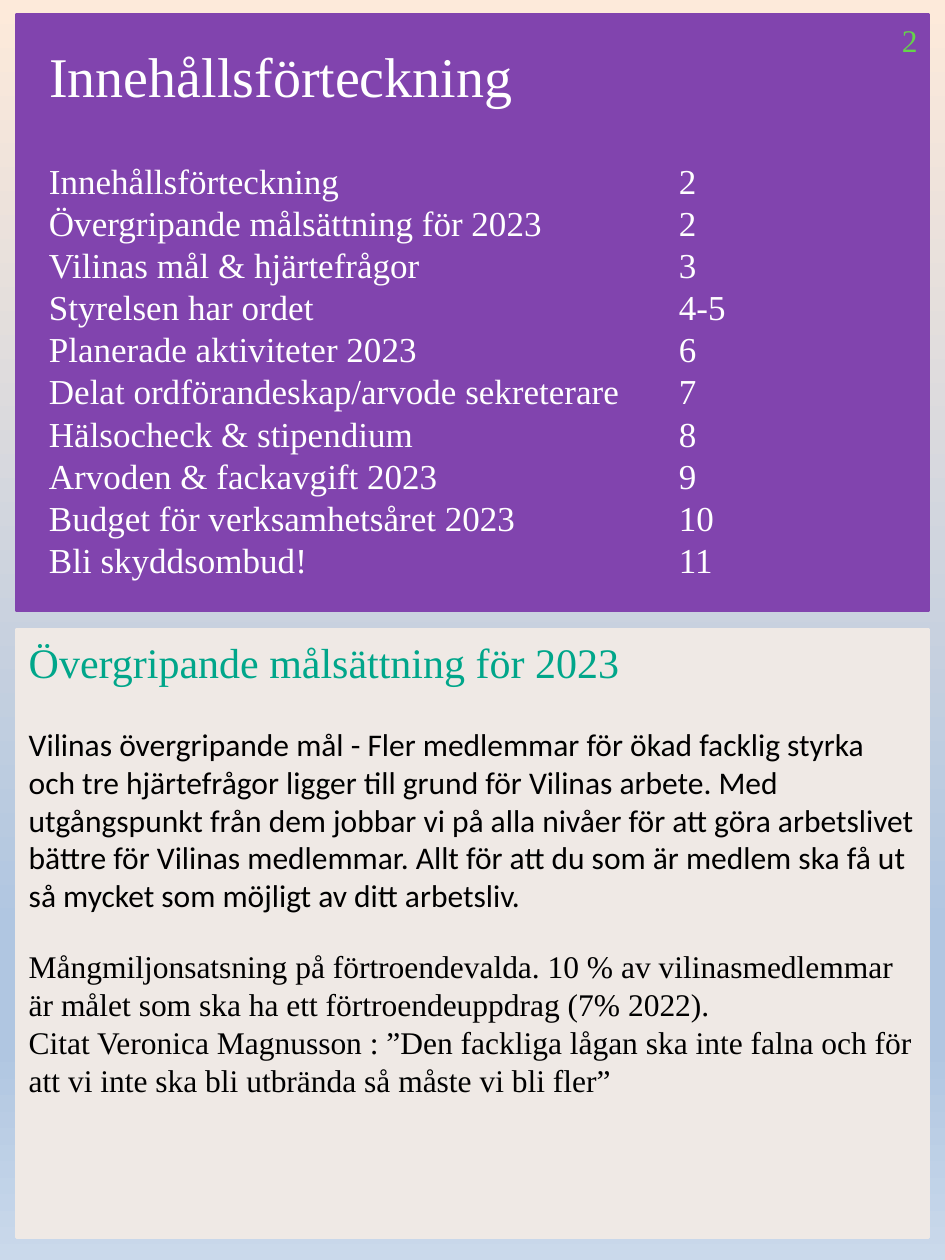
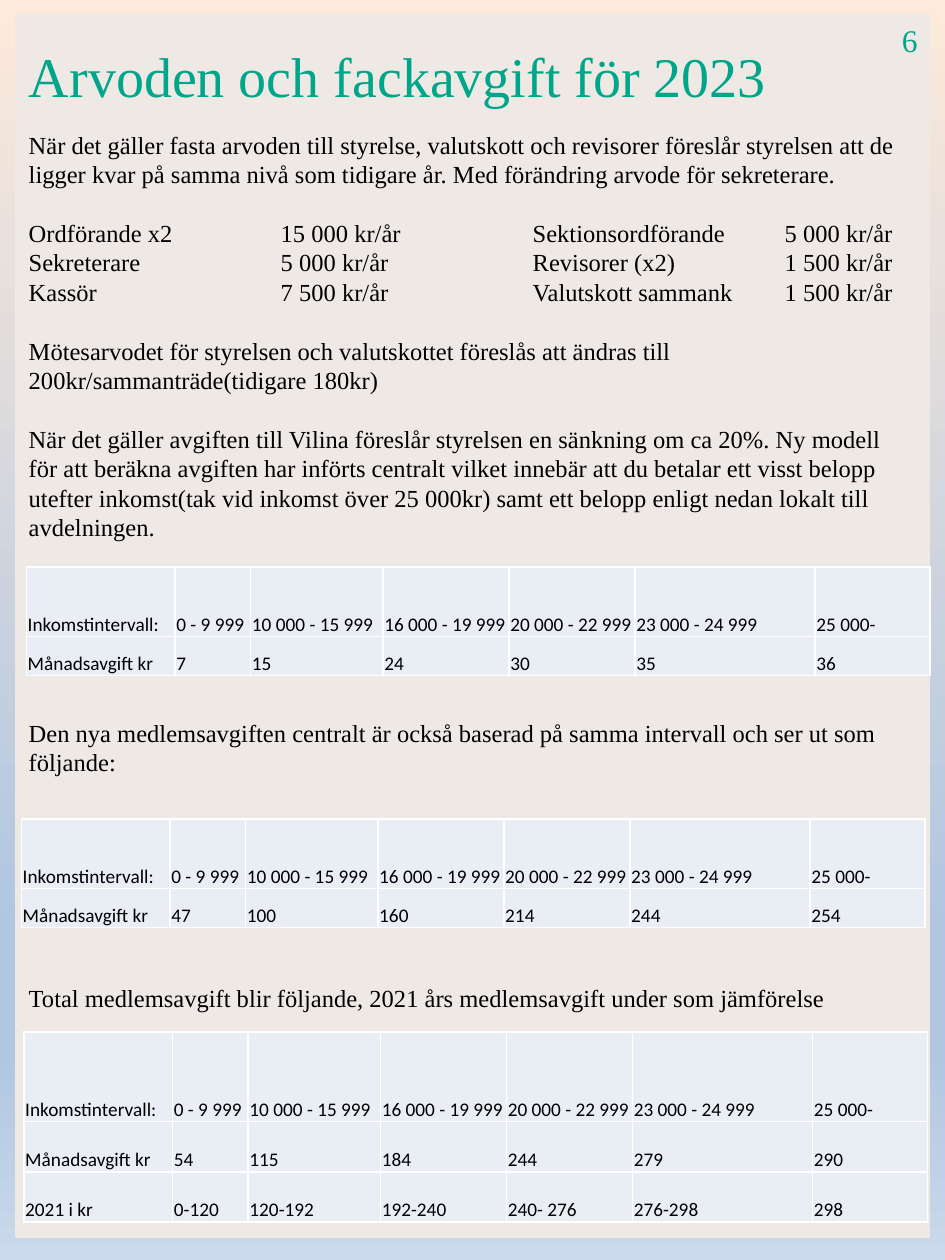
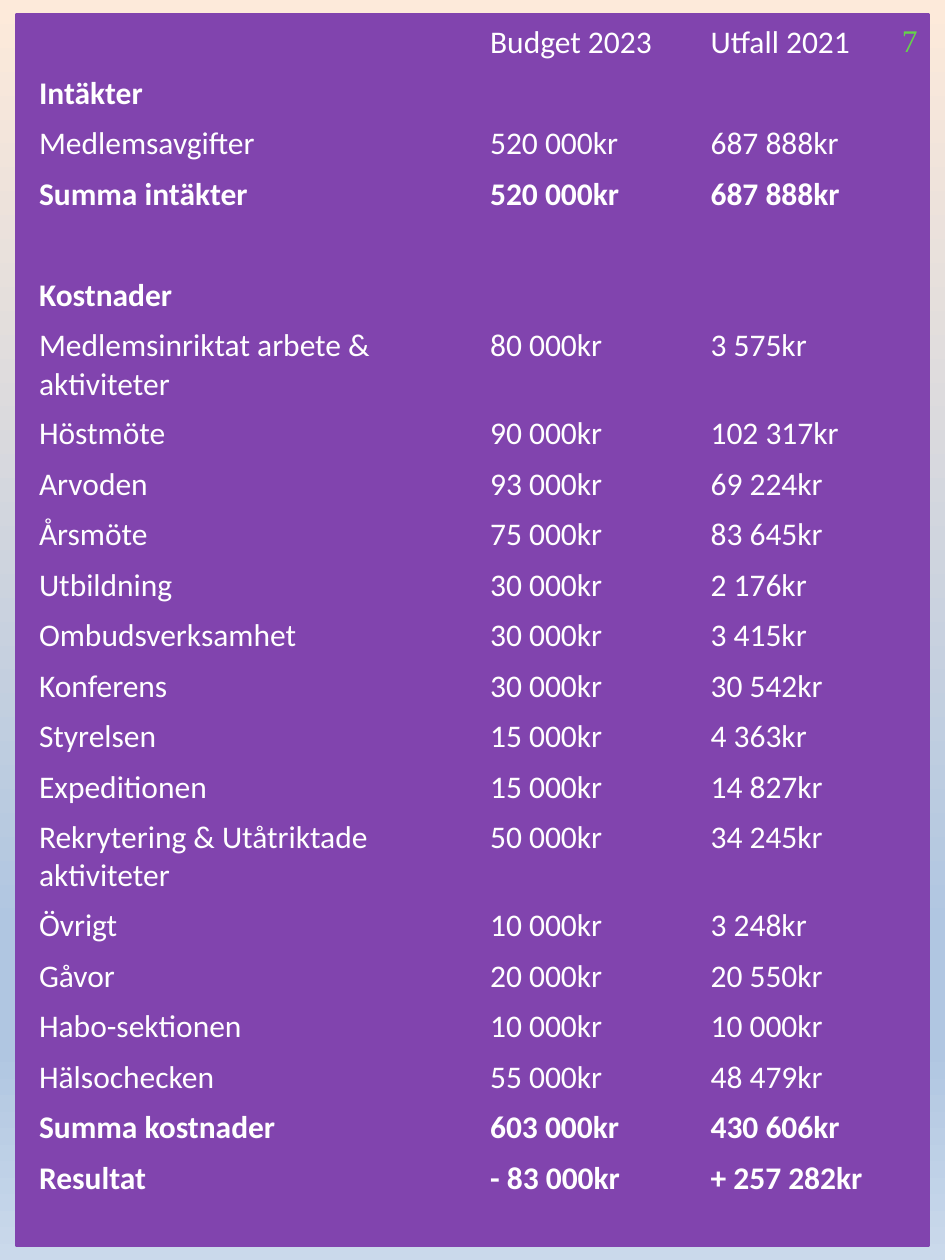
from copy import deepcopy

from lxml.etree import SubElement
from pptx import Presentation
from pptx.dml.color import RGBColor
from pptx.enum.shapes import MSO_SHAPE
from pptx.enum.text import MSO_ANCHOR, MSO_AUTO_SIZE, PP_ALIGN
from pptx.oxml.ns import qn
from pptx.util import Inches, Pt

PURPLE = RGBColor(0x81, 0x44, 0xAE)
CREAM = RGBColor(0xEF, 0xE9, 0xE5)
TEAL = RGBColor(0x00, 0xA6, 0x8A)
GREEN = RGBColor(0x65, 0xD4, 0x4A)
PALE = RGBColor(0xE9, 0xED, 0xF4)
WHITE = RGBColor(0xFF, 0xFF, 0xFF)
BLACK = RGBColor(0x00, 0x00, 0x00)
BACKDROP = [
    (0, RGBColor(0xFD, 0xEA, 0xDA)),
    (0.74, RGBColor(0xB0, 0xC6, 0xE1)),
    (0.83, RGBColor(0xB0, 0xC6, 0xE1)),
    (1, RGBColor(0xCA, 0xD9, 0xEB)),
]
SERIF, SANS = "Times New Roman", "Calibri"
PLAIN_TABLE = "{2D5ABB26-0587-4C30-8999-92F81FD0307C}"
PANEL_LEFT, PANEL_TOP, PANEL_WIDTH = 0.13, 0.12, 7.24
LINE_14 = 16.8

CONTENTS = [
    ("Innehållsförteckning", "2"),
    ("Övergripande målsättning för 2023", "2"),
    ("Vilinas mål & hjärtefrågor", "3"),
    ("Styrelsen har ordet", "4-5"),
    ("Planerade aktiviteter 2023", "6"),
    ("Delat ordförandeskap/arvode sekreterare", "7"),
    ("Hälsocheck & stipendium", "8"),
    ("Arvoden & fackavgift 2023", "9"),
    ("Budget för verksamhetsåret 2023", "10"),
    ("Bli skyddsombud!", "11"),
]

GOALS = [
    ("Övergripande målsättning för 2023", 24, SERIF, TEAL, 0),
    ("Vilinas övergripande mål - Fler medlemmar för ökad facklig styrka och tre "
     "hjärtefrågor ligger till grund för Vilinas arbete. Med utgångspunkt från dem "
     "jobbar vi på alla nivåer för att göra arbetslivet bättre för Vilinas medlemmar. "
     "Allt för att du som är medlem ska få ut så mycket som möjligt av ditt arbetsliv.",
     18, SANS, BLACK, 22),
    ("Mångmiljonsatsning på förtroendevalda. 10 % av vilinasmedlemmar är målet som "
     "ska ha ett förtroendeuppdrag (7% 2022).", 18, SERIF, BLACK, 19),
    ("Citat Veronica Magnusson : ”Den fackliga lågan ska inte falna och för att vi "
     "inte ska bli utbrända så måste vi bli fler”", 18, SERIF, BLACK, 0),
]

FEE_TEXT = [
    ("När det gäller fasta arvoden till styrelse, valutskott och revisorer föreslår "
     "styrelsen att de ligger kvar på samma nivå som tidigare år. Med förändring "
     "arvode för sekreterare.", 0),
    ("Ordförande x2\t15 000 kr/år\tSektionsordförande\t5 000 kr/år", 1),
    ("Sekreterare\t5 000 kr/år\tRevisorer (x2)\t1 500 kr/år", 0),
    ("Kassör\t7 500 kr/år\tValutskott sammank\t1 500 kr/år", 0),
    ("Mötesarvodet för styrelsen och valutskottet föreslås att ändras till "
     "200kr/sammanträde(tidigare 180kr)", 1),
    ("När det gäller avgiften till Vilina föreslår styrelsen en sänkning om ca 20%. "
     "Ny modell för att beräkna avgiften har införts centralt vilket innebär att du "
     "betalar ett visst belopp utefter inkomst(tak vid inkomst över 25 000kr) samt "
     "ett belopp enligt nedan lokalt till avdelningen.", 1),
    ("Den nya medlemsavgiften centralt är också baserad på samma intervall och ser "
     "ut som följande:", 6),
    ("Total medlemsavgift blir följande, 2021 års medlemsavgift under som jämförelse", 7),
]

INTERVALS = ["Inkomstintervall:", "0 - 9 999", "10 000 - 15 999", "16 000 - 19 999",
             "20 000 - 22 999", "23 000 - 24 999", "25 000-"]
MONTHLY = "Månadsavgift kr"
FEE_COLUMNS = [1.18, 0.6, 1.05, 1, 1, 1.43, 0.91]
FEE_TABLES = [
    (0.21, 4.5, [0.55, 0.31], [[MONTHLY, "7", "15", "24", "30", "35", "36"]]),
    (0.17, 6.5, [0.55, 0.31], [[MONTHLY, "47", "100", "160", "214", "244", "254"]]),
    (0.19, 8.19, [0.71, 0.4, 0.4], [
        [MONTHLY, "54", "115", "184", "244", "279", "290"],
        ["2021 i kr", "0-120", "120-192", "192-240", "240- 276", "276-298", "298"],
    ]),
]

BUDGET = [
    ("", "Budget 2023", "Utfall 2021"),
    ("Intäkter", "", ""),
    ("Medlemsavgifter", "520 000kr", "687 888kr"),
    ("Summa intäkter", "520 000kr", "687 888kr"),
    ("", "", ""),
    ("Kostnader", "", ""),
    ("Medlemsinriktat arbete & aktiviteter", "80 000kr", "3 575kr"),
    ("Höstmöte", "90 000kr", "102 317kr"),
    ("Arvoden", "93 000kr", "69 224kr"),
    ("Årsmöte", "75 000kr", "83 645kr"),
    ("Utbildning", "30 000kr", "2 176kr"),
    ("Ombudsverksamhet", "30 000kr", "3 415kr"),
    ("Konferens", "30 000kr", "30 542kr"),
    ("Styrelsen", "15 000kr", "4 363kr"),
    ("Expeditionen", "15 000kr", "14 827kr"),
    ("Rekrytering & Utåtriktade aktiviteter", "50 000kr", "34 245kr"),
    ("Övrigt", "10 000kr", "3 248kr"),
    ("Gåvor", "20 000kr", "20 550kr"),
    ("Habo-sektionen", "10 000kr", "10 000kr"),
    ("Hälsochecken", "55 000kr", "48 479kr"),
    ("Summa kostnader", "603 000kr", "430 606kr"),
    ("Resultat", "- 83 000kr", "+ 257 282kr"),
]
BOLD_ROWS = {"Intäkter", "Summa intäkter", "Kostnader", "Summa kostnader", "Resultat"}


def set_backdrop(master):
    fill = master.background.fill
    fill.gradient()
    fill.gradient_angle = 270
    stops = master.element.find(".//" + qn("a:gsLst"))
    for _ in range(len(BACKDROP) - len(stops)):
        stops.append(deepcopy(stops[0]))
    for stop, (position, color) in zip(fill.gradient_stops, BACKDROP):
        stop.position = position
        stop.color.rgb = color


def write(p, text, size, name, color, bold=None, before=0):
    p.text = text
    p.alignment = PP_ALIGN.LEFT
    p.space_before = Pt(before)
    font = p.font
    font.size, font.name, font.bold = Pt(size), name, bold
    font.color.rgb = color


def paragraphs(tf, count):
    return [tf.paragraphs[0]] + [tf.add_paragraph() for _ in range(count - 1)]


def set_tabs(p, stops):
    tabs = SubElement(p._p.get_or_add_pPr(), qn("a:tabLst"))
    for stop in stops:
        SubElement(tabs, qn("a:tab"), pos=str(Inches(stop)), algn="l")


def add_panel(s, top, height, color):
    panel = s.shapes.add_shape(MSO_SHAPE.RECTANGLE, Inches(PANEL_LEFT), Inches(top),
                               Inches(PANEL_WIDTH), Inches(height))
    panel.shadow.inherit = False
    panel.fill.solid()
    panel.fill.fore_color.rgb = color
    panel.line.color.rgb = color
    panel.line.width = Pt(2)
    panel.text_frame.vertical_anchor = MSO_ANCHOR.TOP
    return panel


def add_text_box(s, left, top, width, height, wrap=True):
    tf = s.shapes.add_textbox(Inches(left), Inches(top), Inches(width),
                              Inches(height)).text_frame
    tf.word_wrap = wrap
    tf.auto_size = MSO_AUTO_SIZE.SHAPE_TO_FIT_TEXT
    return tf


def add_page_number(s, number, color):
    tf = add_text_box(s, 7.06, PANEL_TOP, 0.31, 0.4, wrap=False)
    write(tf.paragraphs[0], number, 18, SERIF, color)


def set_title(s, panel, text, left, width, color):
    title = s.shapes.title
    title.element.addprevious(panel.element)
    title.left, title.top = Inches(left), Inches(0.28)
    title.width, title.height = Inches(width), Inches(0.64)
    tf = title.text_frame
    tf.word_wrap = True
    tf.auto_size = MSO_AUTO_SIZE.SHAPE_TO_FIT_TEXT
    tf.vertical_anchor = MSO_ANCHOR.TOP
    write(tf.paragraphs[0], text, 32, SERIF, color)


def add_table(s, left, top, columns, heights, rows, size, color, fill, bold_rows=()):
    frame = s.shapes.add_table(len(rows), len(columns), Inches(left), Inches(top),
                               Inches(sum(columns)), Inches(sum(heights)))
    table = frame.table
    table.first_row = table.horz_banding = False
    table._tbl.tblPr.find(qn("a:tableStyleId")).text = PLAIN_TABLE
    for column, width in zip(table.columns, columns):
        column.width = Inches(width)
    for row, height, values in zip(table.rows, heights, rows):
        row.height = Inches(height)
        for cell, value in zip(row.cells, values):
            cell.fill.solid()
            cell.fill.fore_color.rgb = fill
            if value:
                write(cell.text_frame.paragraphs[0], value, size, SANS, color,
                      values[0] in bold_rows)
    return table


def add_border(cell, color):
    tcPr = cell._tc.get_or_add_tcPr()
    for index, side in enumerate(("a:lnL", "a:lnR", "a:lnT", "a:lnB")):
        line = SubElement(tcPr, qn(side), w=str(Pt(1)))
        tcPr.insert(index, line)
        solid = SubElement(line, qn("a:solidFill"))
        SubElement(solid, qn("a:srgbClr"), val=str(color))


def add_fee_table(s, left, top, heights, rows):
    table = add_table(s, left, top, FEE_COLUMNS, heights, [INTERVALS] + rows,
                      11, BLACK, PALE)
    for cell in table.iter_cells():
        cell.vertical_anchor = MSO_ANCHOR.BOTTOM
        cell.margin_left = cell.margin_top = cell.margin_right = Inches(0.01)
        cell.margin_bottom = 0
        add_border(cell, WHITE)


def build_contents(prs):
    s = prs.slides.add_slide(prs.slide_layouts[5])
    panel = add_panel(s, PANEL_TOP, 4.72, PURPLE)
    set_title(s, panel, "Innehållsförteckning", 0.29, 3.94, WHITE)
    tf = add_text_box(s, 0.29, 1.22, 6.69, 3.7)
    for p, entry in zip(paragraphs(tf, len(CONTENTS)), CONTENTS):
        set_tabs(p, [5])
        write(p, "\t".join(entry), 20, SERIF, WHITE)
    tf = add_panel(s, 5, 4.82, CREAM).text_frame
    for p, (text, size, name, color, before) in zip(paragraphs(tf, len(GOALS)), GOALS):
        write(p, text, size, name, color, before=before)
    add_page_number(s, "2", GREEN)


def build_fees(prs):
    s = prs.slides.add_slide(prs.slide_layouts[5])
    panel = add_panel(s, PANEL_TOP, 9.69, CREAM)
    set_title(s, panel, "Arvoden och fackavgift för 2023", PANEL_LEFT, 6.61, TEAL)
    tf = add_text_box(s, PANEL_LEFT, 0.98, 7.17, 7.17)
    for p, (text, lines_before) in zip(paragraphs(tf, len(FEE_TEXT)), FEE_TEXT):
        if "\t" in text:
            set_tabs(p, [2, 4, 6])
        write(p, text, 14, SERIF, BLACK, before=lines_before * LINE_14)
    add_page_number(s, "6", TEAL)
    for fee_table in FEE_TABLES:
        add_fee_table(s, *fee_table)


def build_budget(prs):
    s = prs.slides.add_slide(prs.slide_layouts[6])
    add_panel(s, PANEL_TOP, 9.76, PURPLE)
    add_page_number(s, "7", GREEN)
    heights = [0.7 if len(row[0]) > 30 else 0.4 for row in BUDGET]
    add_table(s, 0.21, 0.14, [3.58, 1.75, 1.51], heights, BUDGET, 18, WHITE, PURPLE,
              BOLD_ROWS)


def main():
    prs = Presentation()
    prs.slide_width, prs.slide_height = Inches(7.5), Inches(10)
    set_backdrop(prs.slide_master)
    build_contents(prs)
    build_fees(prs)
    build_budget(prs)
    prs.save("out.pptx")


if __name__ == "__main__":
    main()
